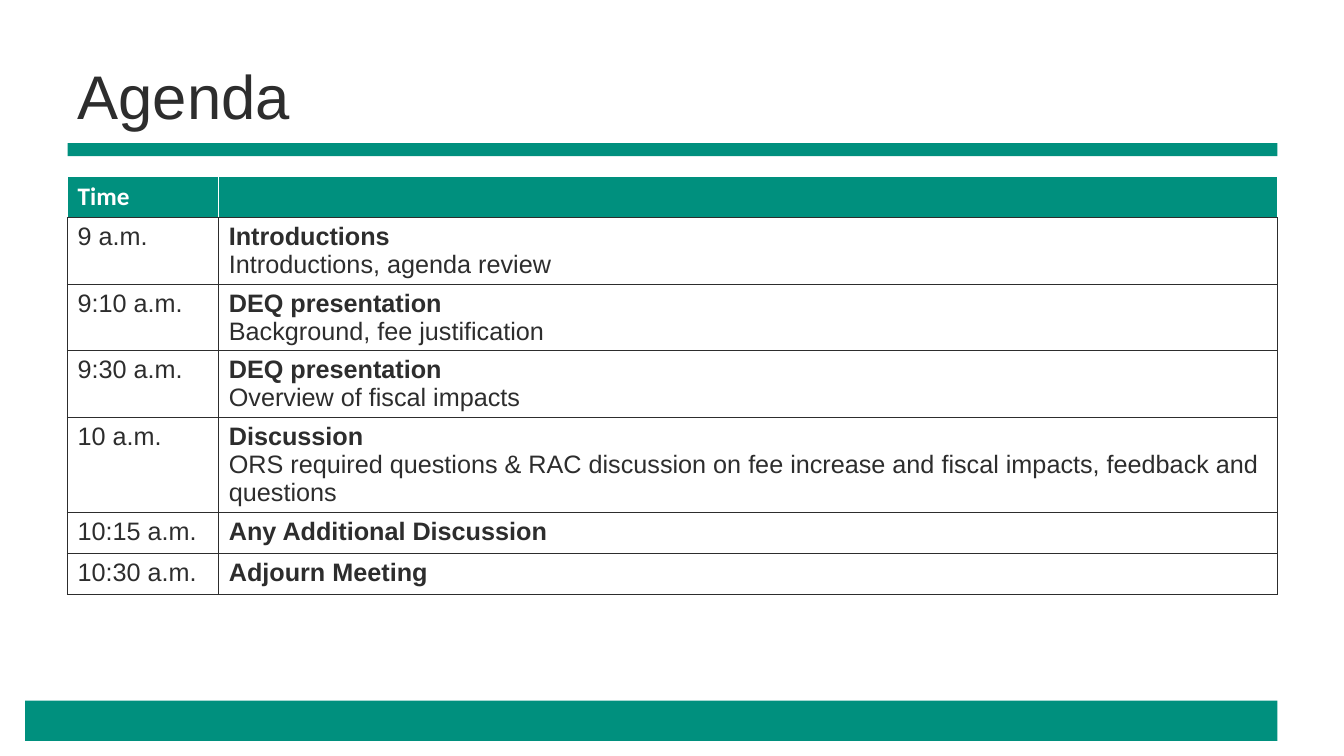
from lxml import etree
from pptx import Presentation
from pptx.dml.color import RGBColor
from pptx.enum.shapes import MSO_SHAPE
from pptx.enum.text import MSO_ANCHOR, PP_ALIGN
from pptx.oxml.ns import qn
from pptx.util import Inches, Pt

RECT = MSO_SHAPE.RECTANGLE
MIDDLE = MSO_ANCHOR.MIDDLE
LEFT = PP_ALIGN.LEFT

HUES = {"teal": "00907E", "ink": "2D2D2D", "white": "FFFFFF"}
STYLES = {
    "title": {"size": Pt(44), "name": "Arial", "bold": False},
    "head": {"size": Pt(18), "name": "Calibri", "bold": True},
    "plain": {"size": Pt(18), "name": "Arial", "bold": False},
    "strong": {"size": Pt(18), "name": "Arial", "bold": True},
}
BARS = [(0.25, 6.95, 12.42, 0.4), (0.67, 1.42, 12, 0.13)]
COLS = [1.5, 10.5]
ROW = 0.41
AGENDA = [
    ("9 a.m.", ["Introductions", "Introductions, agenda review"]),
    ("9:10 a.m.", ["DEQ presentation", "Background, fee justification"]),
    ("9:30 a.m.", ["DEQ presentation", "Overview of fiscal impacts"]),
    ("10 a.m.", ["Discussion",
                 "ORS required questions & RAC discussion on fee increase "
                 "and fiscal impacts, feedback and questions"]),
    ("10:15 a.m.", ["Any Additional Discussion"]),
    ("10:30 a.m.", ["Adjourn Meeting"]),
]


def paint(fill, hue):
    fill.solid()
    fill.fore_color.rgb = RGBColor.from_string(HUES[hue])


def style(font, kind, hue):
    for key, value in STYLES[kind].items():
        setattr(font, key, value)
    font.color.rgb = RGBColor.from_string(HUES[hue])


def add_bar(slide, box):
    bar = slide.shapes.add_shape(RECT, *map(Inches, box))
    bar.shadow.inherit = False
    paint(bar.fill, "teal")
    bar.line.fill.background()


def add_title(slide, box, text):
    title = slide.shapes.title
    title.left, title.top, title.width, title.height = map(Inches, box)
    frame = title.text_frame
    frame.text = text
    frame.vertical_anchor = MIDDLE
    line = frame.paragraphs[0]
    line.alignment = LEFT
    style(line.font, "title", "ink")


def add_edges(cell, hues):
    props = cell._tc.get_or_add_tcPr()
    for side, hue in zip("LRTB", hues):
        edge = etree.SubElement(props, qn(f"a:ln{side}"), w=str(Pt(1)))
        fill = etree.SubElement(edge, qn("a:solidFill"))
        etree.SubElement(fill, qn("a:srgbClr"), val=HUES[hue])


def fill_cell(cell, lines, kinds, hue, back, edges):
    add_edges(cell, edges)
    paint(cell.fill, back)
    cell.text = "\n".join(lines)
    for line, kind in zip(cell.text_frame.paragraphs, kinds):
        style(line.font, kind, hue)


def add_agenda(slide, left, top):
    count = len(AGENDA) + 1
    size = (left, top, sum(COLS), ROW * count)
    table = slide.shapes.add_table(count, len(COLS), *map(Inches, size)).table
    for col, width in zip(table.columns, COLS):
        col.width = Inches(width)
    for row in table.rows:
        row.height = Inches(ROW)
    for col, text in enumerate(["Time", ""]):
        fill_cell(table.cell(0, col), [text], ["head"], "white", "teal",
                  ["white"] * 3 + ["ink"])
    for row, (time, lines) in enumerate(AGENDA, 1):
        parts = [([time], ["plain"]), (lines, ["strong", "plain"])]
        for col, (texts, kinds) in enumerate(parts):
            fill_cell(table.cell(row, col), texts, kinds, "ink", "white",
                      ["ink"] * 4)


def main():
    deck = Presentation()
    deck.slide_width = Inches(13.33)
    deck.slide_height = Inches(7.5)
    slide = deck.slides.add_slide(deck.slide_layouts[5])
    for box in BARS:
        add_bar(slide, box)
    add_title(slide, (0.67, 0.33, 12, 1.22), "Agenda")
    add_agenda(slide, 0.67, 1.75)
    deck.save("out.pptx")


if __name__ == "__main__":
    main()
